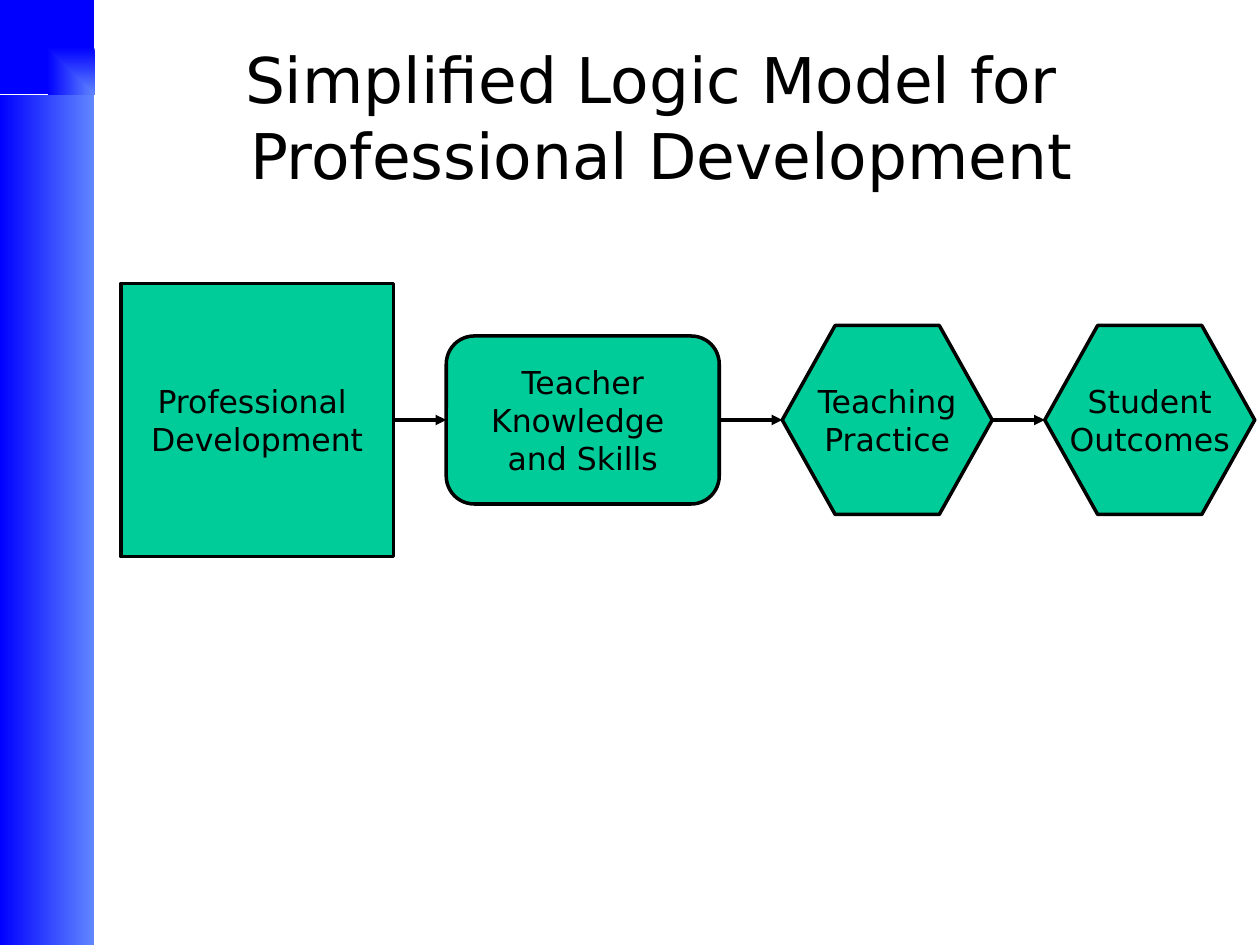
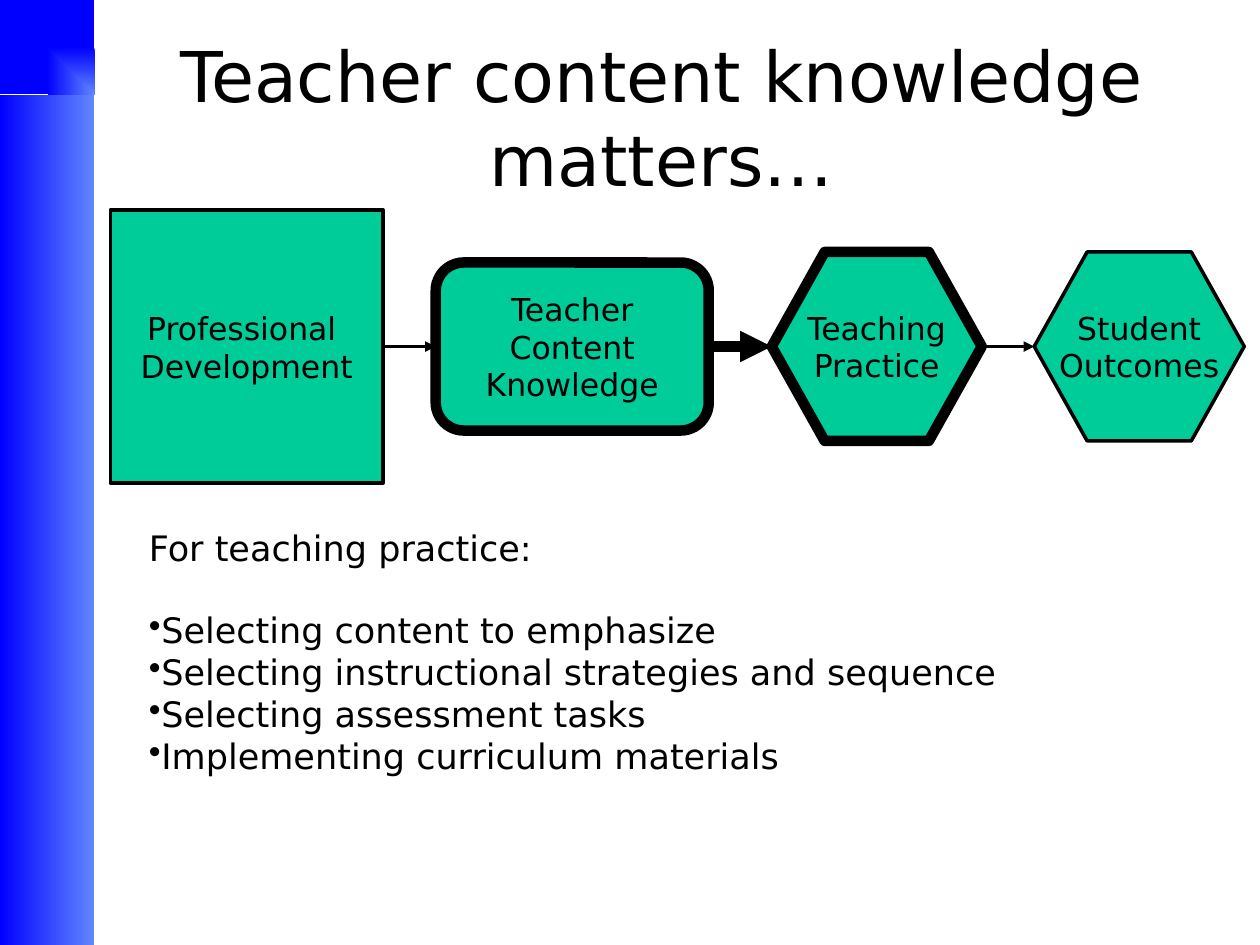
from lxml import etree
from pptx import Presentation
from pptx.dml.color import RGBColor
from pptx.enum.shapes import MSO_CONNECTOR, MSO_SHAPE
from pptx.enum.text import MSO_ANCHOR, MSO_AUTO_SIZE, PP_ALIGN
from pptx.oxml.ns import qn
from pptx.util import Pt

RECT, ROUNDED, HEXAGON = MSO_SHAPE.RECTANGLE, MSO_SHAPE.ROUNDED_RECTANGLE, MSO_SHAPE.HEXAGON
STRAIGHT = MSO_CONNECTOR.STRAIGHT
TOP, MIDDLE = MSO_ANCHOR.TOP, MSO_ANCHOR.MIDDLE
LEFT, CENTER = PP_ALIGN.LEFT, PP_ALIGN.CENTER
NO_AUTOFIT = MSO_AUTO_SIZE.NONE

FONT = "DejaVu Sans"
BLACK, GREEN = "000000", "00CC99"
DEEP_BLUE, LIGHT_BLUE = "0000FF", "6187FF"
SLIDE_WIDTH, SLIDE_HEIGHT, BAND_WIDTH = 720, 540, 54
LEFT_SITE, RIGHT_SITE = 1, 3
THIN, THICK = 2, 6

# Form, width, height and gap after each step of the logic model
STEP_FORMS = [
    (RECT, 156, 156, 30),
    (ROUNDED, 156, 96, 36),
    (HEXAGON, 120, 108, 30),
    (HEXAGON, 120, 108, 0),
]


def rgb(value):
    return RGBColor.from_string(value)


def write(frame, text, size=18, align=CENTER, anchor=MIDDLE, wrap=True, color=BLACK):
    """Fill a text frame; each line of text becomes a paragraph."""
    frame.text = text
    frame.auto_size = NO_AUTOFIT
    frame.word_wrap = wrap
    frame.vertical_anchor = anchor
    for paragraph in frame.paragraphs:
        paragraph.alignment = align
        paragraph.font.size = Pt(size)
        paragraph.font.name = FONT
        paragraph.font.color.rgb = rgb(color)


def add_form(slide, form, left, top, width, height):
    shape = slide.shapes.add_shape(form, Pt(left), Pt(top), Pt(width), Pt(height))
    shape.shadow.inherit = False
    return shape


def add_band(slide, layout, top, height, start, end, from_corner=False):
    """Draw a gradient band and move it to the layout, behind its placeholders."""
    band = add_form(slide, RECT, 0, top, BAND_WIDTH, height)
    band.line.fill.background()
    band.fill.gradient()
    band.fill.gradient_angle = 0
    for stop, color, position in zip(band.fill.gradient_stops, (start, end), (0, 1)):
        stop.color.rgb = rgb(color)
        stop.position = position
    if from_corner:
        gradient = band.element.spPr.find(qn("a:gradFill"))
        gradient.remove(gradient.find(qn("a:lin")))
        center = etree.SubElement(gradient, qn("a:path"), {"path": "rect"})
        etree.SubElement(center, qn("a:fillToRect"), l="100000", t="100000")
    layout.shapes.element.insert(2, band.element)


def add_title(slide, text, size):
    title = slide.shapes.title
    title.left, title.top, title.width, title.height = Pt(36), Pt(21.6), Pt(684), Pt(90)
    write(title.text_frame, text, size=size)


def add_step(slide, form, left, center_y, width, height, label, border):
    step = add_form(slide, form, left, center_y - height / 2, width, height)
    if form == HEXAGON:
        step.adjustments[0] = 0.28
    step.fill.solid()
    step.fill.fore_color.rgb = rgb(GREEN)
    step.line.color.rgb = rgb(BLACK)
    step.line.width = Pt(border)
    write(step.text_frame, label, wrap=False)
    return step


def add_arrow(slide, source, target, y, weight):
    arrow = slide.shapes.add_connector(
        STRAIGHT, source.left + source.width, Pt(y), target.left, Pt(y))
    if source.auto_shape_type != HEXAGON:
        arrow.begin_connect(source, RIGHT_SITE)
    if target.auto_shape_type != HEXAGON:
        arrow.end_connect(target, LEFT_SITE)
    arrow.line.color.rgb = rgb(BLACK)
    arrow.line.width = Pt(weight)
    etree.SubElement(arrow.line._get_or_add_ln(), qn("a:tailEnd"), type="triangle")
    etree.SubElement(arrow.element.spPr, qn("a:effectLst"))


def add_logic_model(slide, left, center_y, labels, emphasized=()):
    """Draw the chain of steps; the emphasized ones and the arrow between them are thick."""
    steps = []
    borders = [THICK if i in emphasized else THIN for i in range(len(labels))]
    for (form, width, height, gap), label, border in zip(STEP_FORMS, labels, borders):
        steps.append(add_step(slide, form, left, center_y, width, height, label, border))
        left += width + gap
    for i in range(len(steps) - 1):
        add_arrow(slide, steps[i], steps[i + 1], center_y, min(borders[i:i + 2]))


def add_practice_list(slide, heading, items):
    box = slide.shapes.add_textbox(Pt(78), Pt(276), Pt(624), Pt(204))
    frame = box.text_frame
    write(frame, "\n".join([heading, *items]), size=20, align=LEFT, anchor=TOP)
    frame.margin_top = Pt(24.6)
    bullets = frame.paragraphs[1:]
    bullets[0].space_before = Pt(23.3)
    for paragraph in bullets:
        etree.SubElement(paragraph._p.get_or_add_pPr(), qn("a:buChar"), char="•")
        # The bullet mark must precede the default run format
        properties = paragraph._p.pPr
        run_format = properties.find(qn("a:defRPr"))
        if run_format is not None:
            properties.append(run_format)


def main():
    prs = Presentation()
    prs.slide_width, prs.slide_height = Pt(SLIDE_WIDTH), Pt(SLIDE_HEIGHT)
    title_only = prs.slide_layouts[5]

    # Simplified logic model
    overview = prs.slides.add_slide(title_only)
    add_band(overview, title_only, BAND_WIDTH, SLIDE_HEIGHT - BAND_WIDTH,
             DEEP_BLUE, LIGHT_BLUE)
    add_band(overview, title_only, 0, BAND_WIDTH, LIGHT_BLUE, DEEP_BLUE, from_corner=True)
    add_title(overview, "Simplified Logic Model for \vProfessional Development", 36)
    development = "Professional \nDevelopment"
    practice_and_outcomes = ["Teaching\nPractice", "Student\nOutcomes"]
    add_logic_model(overview, 69, 240, [
        development, "Teacher\nKnowledge \nand Skills", *practice_and_outcomes])

    # Content knowledge and teaching practice
    knowledge = prs.slides.add_slide(title_only)
    add_title(knowledge, "Teacher content knowledge matters…", 40)
    add_logic_model(knowledge, 63, 198, [
        development, "Teacher\nContent\nKnowledge", *practice_and_outcomes],
        emphasized=(1, 2))
    add_practice_list(knowledge, "For teaching practice:", [
        "Selecting content to emphasize",
        "Selecting instructional strategies and sequence",
        "Selecting assessment tasks",
        "Implementing curriculum materials",
    ])

    prs.save("out.pptx")


if __name__ == "__main__":
    main()
